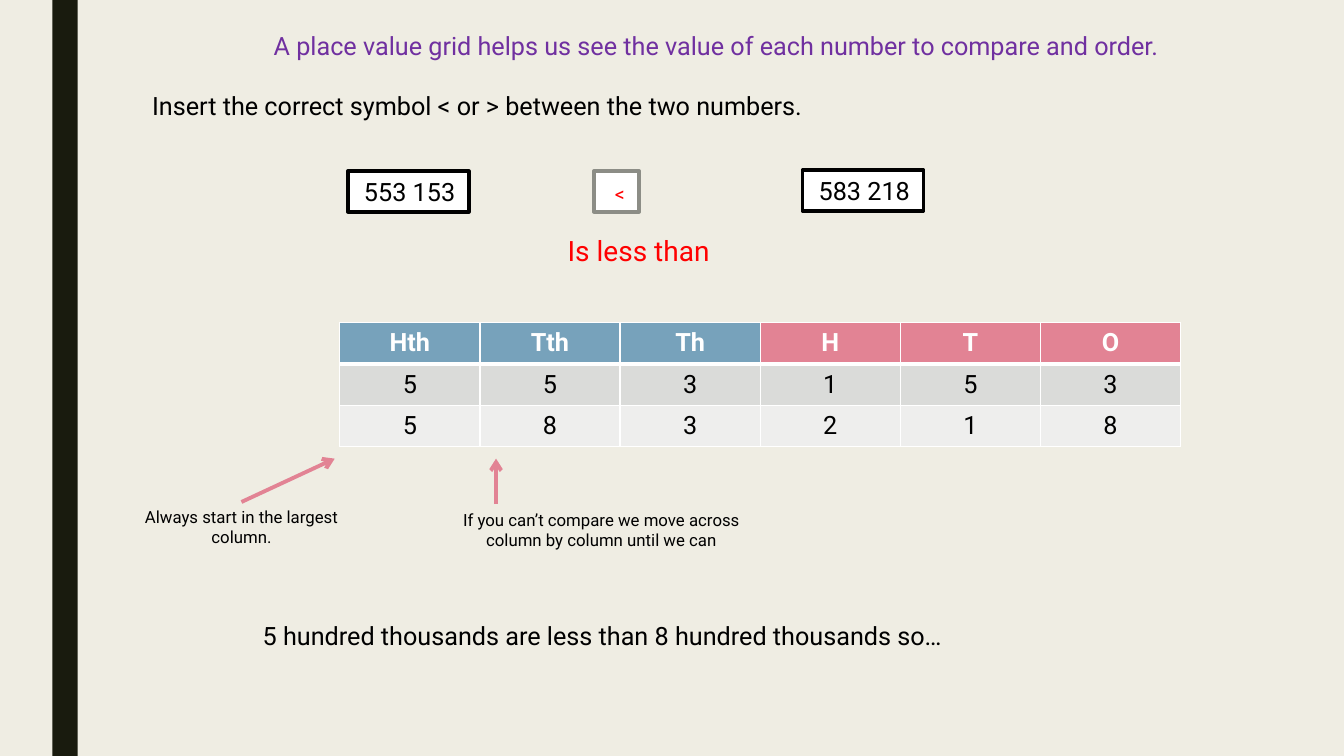
from lxml.etree import SubElement
from pptx import Presentation
from pptx.dml.color import RGBColor
from pptx.enum.shapes import MSO_CONNECTOR, MSO_SHAPE
from pptx.enum.text import MSO_ANCHOR, MSO_AUTO_SIZE, PP_ALIGN
from pptx.oxml import parse_xml
from pptx.oxml.ns import nsdecls, qn
from pptx.util import Inches, Pt

COLOURS = {
    "background": "EFEDE3", "sidebar": "191B0E", "purple": "7030A0",
    "black": "000000", "white": "FFFFFF", "red": "FF0000", "grey": "8C8D86",
    "blue": "77A2BB", "pink": "E28394", "band_dark": "DADBD9", "band_light": "EEEEED",
}


def rgb(name):
    return RGBColor.from_string(COLOURS[name])


def write(frame, text, size, colour, align=PP_ALIGN.CENTER, bold=False):
    """Fill a text frame with one formatted paragraph."""
    frame.text = text
    paragraph = frame.paragraphs[0]
    paragraph.alignment = align
    font_format = {"name": "Roboto", "size": Pt(size), "bold": bold}
    for attribute, value in font_format.items():
        setattr(paragraph.font, attribute, value)
    paragraph.font.color.rgb = rgb(colour)


prs = Presentation()
prs.slide_width, prs.slide_height = Inches(13.33), Inches(7.5)
slide = prs.slides.add_slide(prs.slide_layouts[5])
slide.background.fill.solid()
slide.background.fill.fore_color.rgb = rgb("background")

# Title
title = slide.shapes.title
title_place = {"left": 2.08, "top": 0.25, "width": 10.05, "height": 0.4}
for attribute, value in title_place.items():
    setattr(title, attribute, Inches(value))
title.text_frame.vertical_anchor = MSO_ANCHOR.TOP
title.text_frame.auto_size = MSO_AUTO_SIZE.NONE
write(title.text_frame,
      "A place value grid helps us see the value of each number to compare and order.",
      18, "purple")

# Sidebar and the boxes for the two numbers and the symbol
boxes = [
    (0.52, 0, 0.25, 7.5, "sidebar", None, ""),
    (7.96, 1.69, 1.2, 0.4, "white", "black", " 583 218"),
    (3.45, 1.7, 1.2, 0.4, "white", "black", " 553 153"),
    (5.89, 1.7, 0.45, 0.4, "white", "grey", ""),
]
for left, top, width, height, fill, outline, number in boxes:
    box = slide.shapes.add_shape(MSO_SHAPE.RECTANGLE, Inches(left), Inches(top),
                                 Inches(width), Inches(height))
    box.shadow.inherit = False
    box.fill.solid()
    box.fill.fore_color.rgb = rgb(fill)
    if outline:
        box.line.color.rgb = rgb(outline)
        box.line.width = Pt(2.75)
    else:
        box.line.fill.background()
    if number:
        box.text_frame.word_wrap = False
        box.text_frame.vertical_anchor = MSO_ANCHOR.TOP
        write(box.text_frame, number, 18, "black", PP_ALIGN.LEFT)

# Place value grid
grid_rows = [["Hth", "Tth", "Th", "H", "T", "O"], "553153", "583218"]
grid = slide.shapes.add_table(3, 6, Inches(3.37), Inches(3.2),
                              Inches(8.34), Inches(1.22)).table
for column in grid.columns:
    column.width = Inches(1.39)
for r, values in enumerate(grid_rows):
    grid.rows[r].height = Inches(0.41)
    for c, value in enumerate(values):
        cell = grid.cell(r, c)
        header_fill = "blue" if c < 3 else "pink"
        cell.vertical_anchor = MSO_ANCHOR.MIDDLE
        write(cell.text_frame, value, 18, "black" if r else "white", bold=r == 0)
        properties = cell._tc.get_or_add_tcPr()
        for side in ("lnL", "lnR", "lnT", "lnB"):
            heavy = (r, side) in ((0, "lnB"), (1, "lnT"))
            border = SubElement(properties, qn(f"a:{side}"), w=str(Pt(3 if heavy else 1)))
            border_fill = SubElement(border, qn("a:solidFill"))
            SubElement(border_fill, qn("a:srgbClr"), val=COLOURS["white"])
        cell.fill.solid()
        cell.fill.fore_color.rgb = rgb([header_fill, "band_dark", "band_light"][r])

# Instruction, answer and explanations
start_hint = "Always start in the largest column."
labels = [
    (1.41, 0.85, 6.79, 0.4, 18, "black", PP_ALIGN.LEFT,
     "Insert the correct symbol < or > between the two numbers."),
    (1.02, 4.98, 2.75, 0.3, 12, "black", PP_ALIGN.CENTER, start_hint),
    (4.2, 5.01, 3.53, 0.5, 12, "black", PP_ALIGN.CENTER,
     "If you can’t compare we move across column by column until we can"),
    (1.83, 6.1, 8.29, 0.4, 18, "black", PP_ALIGN.CENTER,
     "5 hundred thousands are less than 8 hundred thousands so…"),
    (6, 1.76, 0.27, 0.34, 14, "red", PP_ALIGN.CENTER, "<"),
    (4.72, 2.27, 3.23, 0.44, 20, "red", PP_ALIGN.CENTER, "Is less than"),
]
label_boxes = {}
for left, top, width, height, size, colour, align, text in labels:
    label = slide.shapes.add_textbox(Inches(left), Inches(top), Inches(width), Inches(height))
    label.text_frame.word_wrap = True
    write(label.text_frame, text, size, colour, align)
    label_boxes[text] = label
start_frame = label_boxes[start_hint].text_frame
start_frame.margin_left = start_frame.margin_right = Inches(0.3)

# Arrows from the hints to the grid
arrows = [(2.4, 4.98, 3.32, 4.55, start_hint), (4.92, 5, 4.92, 4.55, None)]
for x1, y1, x2, y2, source in arrows:
    arrow = slide.shapes.add_connector(MSO_CONNECTOR.STRAIGHT, Inches(x1), Inches(y1),
                                       Inches(x2), Inches(y2))
    if source:
        arrow.begin_connect(label_boxes[source], 0)
    arrow.line.color.rgb = rgb("pink")
    arrow.line.width = Pt(2.75)
    arrow.line._get_or_add_ln().append(
        parse_xml(f'<a:tailEnd {nsdecls("a")} type="arrow"/>'))
    SubElement(arrow._element.spPr, qn("a:effectLst"))

prs.save("out.pptx")
